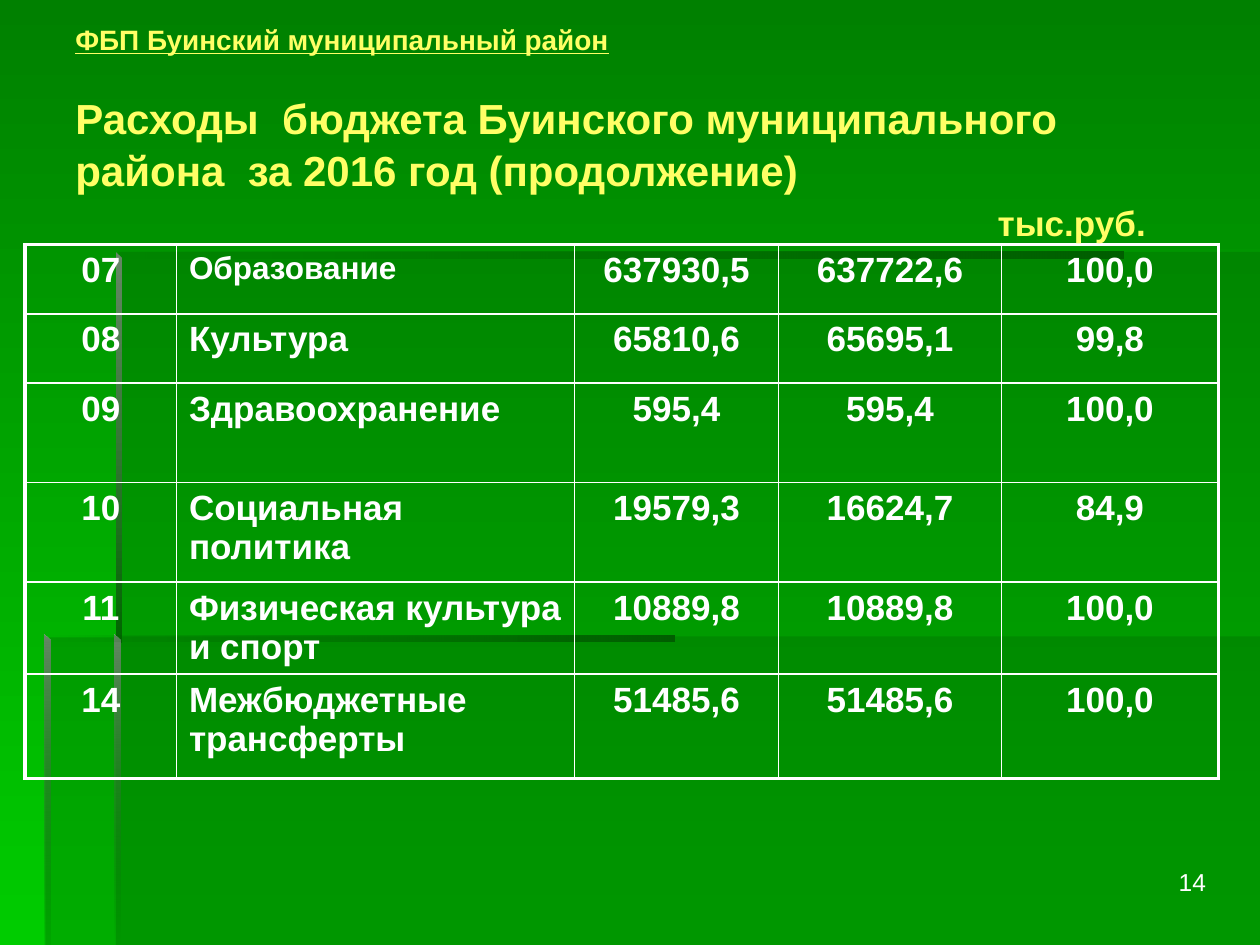
from dataclasses import dataclass
from lxml.etree import SubElement
from pptx import Presentation
from pptx.dml.color import RGBColor
from pptx.enum.text import MSO_ANCHOR, PP_ALIGN
from pptx.oxml.ns import qn
from pptx.util import Inches, Pt


@dataclass(frozen=True)
class Theme:
    """Colours, font and type sizes of the slide."""
    font: str = "Arial"
    white: str = "FFFFFF"
    yellow: str = "FFFF66"
    top: str = "008000"
    base: str = "00CC00"
    shade: str = "006600"
    deep: str = "005E00"
    light: str = "668666"
    head: int = 24
    body: int = 20
    label: int = 18
    small: int = 16
    page: int = 14
    thin: float = 1
    thick: float = 2.25


THEME = Theme()
DOWN, ACROSS = 270, 0
COLS = [1.2, 3.16, 1.62, 1.77, 1.72]
ROWS = [0.55, 0.55, 0.79, 0.79, 0.73, 0.83]
DATA = [
    ("07", "Образование", "637930,5", "637722,6", "100,0"),
    ("08", "Культура", "65810,6", "65695,1", "99,8"),
    ("09", "Здравоохранение", "595,4", "595,4", "100,0"),
    ("10", "Социальная политика", "19579,3", "16624,7", "84,9"),
    ("11", "Физическая культура и спорт", "10889,8", "10889,8", "100,0"),
    ("14", "Межбюджетные трансферты", "51485,6", "51485,6", "100,0"),
]


def style(para, size, color, bold=True, align=PP_ALIGN.LEFT):
    """Set font and alignment of a paragraph."""
    font = para.font
    font.name, font.size, font.bold = THEME.font, Pt(size), bold
    font.color.rgb = RGBColor.from_string(color)
    para.alignment = align


def blend(fill, colors, angle):
    """Apply a two-stop gradient."""
    fill.gradient()
    fill.gradient_angle = angle
    for stop, color, place in zip(fill.gradient_stops, colors, (0, 1)):
        stop.color.rgb = RGBColor.from_string(color)
        stop.position = place


def outline(slide, box, points):
    """Draw a closed outline from points given relative to a box."""
    left, top = box
    spots = [(Inches(left + x), Inches(top + y)) for x, y in points]
    form = slide.shapes.build_freeform(*spots[0], scale=1.0)
    form.add_line_segments(spots[1:], close=True)
    shape = form.convert_to_shape()
    shape.shadow.inherit = False
    shape.line.fill.background()
    return shape


def fade(shape, alphas):
    """Set the opacity in percent of each fill colour in turn."""
    for node, alpha in zip(shape._element.spPr.iter(qn("a:srgbClr")), alphas):
        SubElement(node, qn("a:alpha")).set("val", str(alpha * 1000))


def panel(slide, box, points):
    """Draw a translucent panel."""
    shape = outline(slide, box, points)
    shape.fill.solid()
    shape.fill.fore_color.rgb = RGBColor.from_string(THEME.shade)
    fade(shape, [30])


def beam(slide, box, width):
    """Draw a horizontal edge that fades in to the right."""
    shape = outline(slide, box, [(0, 0), (0, 0.05), (width, 0.05), (width, 0)])
    blend(shape.fill, (THEME.shade, THEME.deep), ACROSS)
    fade(shape, (0, 100))


def post(slide, box, height, alpha):
    """Draw a vertical edge with a bevelled top."""
    shape = outline(slide, box, [(0, 0), (0, height), (0.05, height), (0.05, 0.05)])
    blend(shape.fill, (THEME.light, THEME.shade), DOWN)
    fade(shape, (100, alpha))


def backdrop(slide):
    """Draw the gradient background with its panels and edges."""
    blend(slide.background.fill, (THEME.top, THEME.base), DOWN)
    panel(slide, (0.92, 5.05), [(0, 0), (0, 2.45), (9.08, 2.45), (9.08, 0)])
    panel(slide, (0.36, 2), [(0.58, 3.06), (0, 3.06), (0, 5.5), (9.64, 5.5),
                             (9.64, 0), (0.58, 0)])
    beam(slide, (0.92, 2), 8)
    post(slide, (0.92, 2), 3.1, 100)
    post(slide, (0.91, 5.04), 2.46, 0)
    beam(slide, (0.35, 5.04), 5)
    post(slide, (0.35, 5.04), 2.46, 10)


def title(slide, box):
    """Write the source line, the heading and the unit."""
    frame = slide.shapes.add_textbox(*map(Inches, box)).text_frame
    frame.word_wrap = True
    frame.vertical_anchor = MSO_ANCHOR.MIDDLE
    lines = [
        ("ФБП Буинский муниципальный район", THEME.small, 0),
        ("Расходы  бюджета Буинского муниципального района  за 2016 год (продолжение)",
         THEME.head, 20),
        ("тыс.руб.", THEME.body, 4),
    ]
    for i, (text, size, gap) in enumerate(lines):
        para = frame.add_paragraph() if i else frame.paragraphs[0]
        para.text = text
        para.space_before = Pt(gap)
        style(para, size, THEME.yellow)
    frame.paragraphs[0].font.underline = True
    frame.paragraphs[1].line_spacing = 1.03
    para._p.get_or_add_pPr().set("marL", str(Inches(7.32)))


def border(cell, widths):
    """Give a cell white borders, in the order left, right, top, bottom."""
    props = cell._tc.get_or_add_tcPr()
    for i, (side, width) in enumerate(zip("LRTB", widths)):
        line = props.makeelement(qn(f"a:ln{side}"), {"w": str(Pt(width))})
        fill = SubElement(line, qn("a:solidFill"))
        SubElement(fill, qn("a:srgbClr")).set("val", THEME.white)
        props.insert(i, line)


def budget(slide, box):
    """Place the table of expenses."""
    table = slide.shapes.add_table(len(ROWS), len(COLS), *map(Inches, box)).table
    table.first_row = table.horz_banding = False
    for col, width in zip(table.columns, COLS):
        col.width = Inches(width)
    for row, height in zip(table.rows, ROWS):
        row.height = Inches(height)
    for r, values in enumerate(DATA):
        for c, value in enumerate(values):
            cell = table.cell(r, c)
            cell.text = value
            cell.fill.background()
            size = THEME.label if (r, c) == (0, 1) else THEME.body
            align = PP_ALIGN.LEFT if c == 1 else PP_ALIGN.CENTER
            style(cell.text_frame.paragraphs[0], size, THEME.white, align=align)
            edges = (c == 0, c == len(COLS) - 1, r == 0, r == len(ROWS) - 1)
            border(cell, [THEME.thick if edge else THEME.thin for edge in edges])


def number(slide, box):
    """Write the page number."""
    frame = slide.shapes.add_textbox(*map(Inches, box)).text_frame
    frame.word_wrap = True
    frame.text = "14"
    style(frame.paragraphs[0], THEME.page, THEME.white, False, PP_ALIGN.RIGHT)


def main():
    """Build and save the slide."""
    deck = Presentation()
    deck.slide_width, deck.slide_height = Inches(10), Inches(7.5)
    slide = deck.slides.add_slide(deck.slide_layouts[6])
    backdrop(slide)
    budget(slide, (0.2, 1.94, sum(COLS), sum(ROWS)))
    title(slide, (0.5, 0.27, 9.17, 1.57))
    number(slide, (7.59, 6.83, 2.08, 0.52))
    deck.save("out.pptx")


if __name__ == "__main__":
    main()
